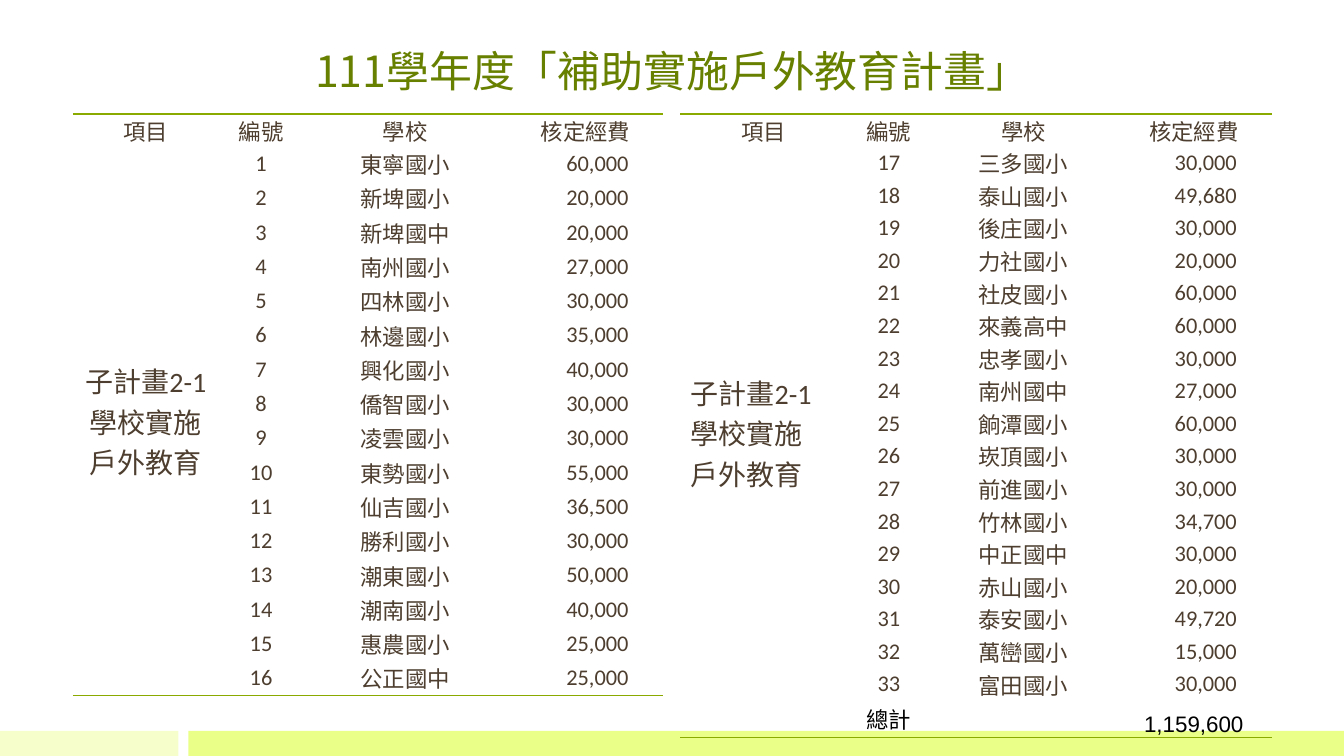
from dataclasses import dataclass
from lxml.etree import SubElement
from pptx import Presentation
from pptx.dml.color import RGBColor
from pptx.enum.shapes import MSO_SHAPE
from pptx.enum.text import MSO_ANCHOR, PP_ALIGN
from pptx.oxml import parse_xml
from pptx.oxml.ns import nsdecls, qn
from pptx.util import Pt


@dataclass(frozen=True)
class Theme:
    title: str = "688000"
    ink: str = "4D3E2F"
    black: str = "000000"
    rule: str = "8BAA00"
    pale: str = "F6FFCC"
    lime: str = "E9FF88"
    sans: str = "Calibri"
    han: str = "Noto Sans CJK SC"
    sum: str = "Arial"
    head: float = 30.6
    plan: float = 20
    body: float = 16


THEME = Theme()
PLAIN = "{2D5ABB26-0587-4C30-8999-92F81FD0307C}"
HEADS = ("項目", "編號", "學校", "核定經費")
PLAN = "子計畫2-1\n學校實施\n戶外教育"
FIRST = [
    ("東寧國小", 60000), ("新埤國小", 20000), ("新埤國中", 20000),
    ("南州國小", 27000), ("四林國小", 30000), ("林邊國小", 35000),
    ("興化國小", 40000), ("僑智國小", 30000), ("凌雲國小", 30000),
    ("東勢國小", 55000), ("仙吉國小", 36500), ("勝利國小", 30000),
    ("潮東國小", 50000), ("潮南國小", 40000), ("惠農國小", 25000),
    ("公正國中", 25000),
]
SECOND = [
    ("三多國小", 30000), ("泰山國小", 49680), ("後庄國小", 30000),
    ("力社國小", 20000), ("社皮國小", 60000), ("來義高中", 60000),
    ("忠孝國小", 30000), ("南州國中", 27000), ("餉潭國小", 60000),
    ("崁頂國小", 30000), ("前進國小", 30000), ("竹林國小", 34700),
    ("中正國中", 30000), ("赤山國小", 20000), ("泰安國小", 49720),
    ("萬巒國小", 15000), ("富田國小", 30000),
]


def put(frame, text, size=THEME.body, color=THEME.ink, font=THEME.sans,
        align=PP_ALIGN.CENTER):
    para = frame.paragraphs[0]
    para.alignment = align
    for i, line in enumerate(text.split("\n")):
        if i:
            para.add_line_break()
        run = para.add_run()
        run.text = line
        run.font.size = Pt(size)
        run.font.color.rgb = RGBColor.from_string(color)
        run.font.name = font
        SubElement(run.font._element, qn("a:ea"), typeface=THEME.han)


def inset(part, left=0, top=0, right=0):
    part.margin_left, part.margin_top = Pt(left), Pt(top)
    part.margin_right, part.margin_bottom = Pt(right), 0


def title(slide, left, top, width, height):
    frame = slide.shapes.add_textbox(
        Pt(left), Pt(top), Pt(width), Pt(height)).text_frame
    frame.word_wrap = True
    frame.vertical_anchor = MSO_ANCHOR.BOTTOM
    inset(frame)
    put(frame, "111學年度「補助實施戶外教育計畫」", size=THEME.head,
        color=THEME.title, font=THEME.han)


def footer(slide, left, top, width, height):
    short, gap = 127.5, 7
    rest = short + gap
    for x, span, color in ((left, short, THEME.pale),
                           (left + rest, width - rest, THEME.lime)):
        bar = slide.shapes.add_shape(
            MSO_SHAPE.RECTANGLE, Pt(x), Pt(top), Pt(span), Pt(height))
        bar.shadow.inherit = False
        bar.fill.solid()
        bar.fill.fore_color.rgb = RGBColor.from_string(color)
        bar.line.fill.background()


def rule(cell, side):
    cell._tc.get_or_add_tcPr().insert(0, parse_xml(
        f'<a:{side} {nsdecls("a")} w="12700"><a:solidFill>'
        f'<a:srgbClr val="{THEME.rule}"/></a:solidFill></a:{side}>'))


def grants(slide, left, top, widths, heights, start, schools, total=None,
           align=PP_ALIGN.CENTER, pad=0, drop=0):
    rows, cols = len(heights), len(widths)
    shape = slide.shapes.add_table(
        rows, cols, Pt(left), Pt(top), Pt(sum(widths)), Pt(sum(heights)))
    table = shape.table
    table.first_row = table.horz_banding = False
    table._tbl.tblPr.find(qn("a:tableStyleId")).text = PLAIN
    for col, width in zip(table.columns, widths):
        col.width = Pt(width)
    for row, height in zip(table.rows, heights):
        row.height = Pt(height)
    for cell in table.iter_cells():
        cell.fill.background()
        cell.vertical_anchor = MSO_ANCHOR.MIDDLE
        inset(cell)
    for c, head in enumerate(HEADS):
        put(table.cell(0, c).text_frame, head)
        rule(table.cell(0, c), "lnT")
        rule(table.cell(rows - 1, c), "lnB")
    plan = table.cell(1, 0)
    plan.merge(table.cell(len(schools), 0))
    inset(plan, left=pad, top=drop)
    put(plan.text_frame, PLAN, size=THEME.plan, align=align)
    if total is None:
        rule(plan, "lnB")
    for r, (school, amount) in enumerate(schools, 1):
        put(table.cell(r, 1).text_frame, str(start + r - 1))
        put(table.cell(r, 2).text_frame, school)
        cost = table.cell(r, 3)
        inset(cost, right=25)
        put(cost.text_frame, f"{amount:,}", align=PP_ALIGN.RIGHT)
    if total is not None:
        put(table.cell(rows - 1, 1).text_frame, "總計",
            color=THEME.black, font=THEME.han)
        cell = table.cell(rows - 1, 3)
        cell.vertical_anchor = MSO_ANCHOR.BOTTOM
        put(cell.text_frame, f"{total:,}", color=THEME.black, font=THEME.sum)


def main():
    deck = Presentation()
    deck.slide_width, deck.slide_height = Pt(960), Pt(540)
    slide = deck.slides.add_slide(deck.slide_layouts[6])
    footer(slide, 0, 522, 960, 18)
    title(slide, 111, 21.5, 738, 47)
    grants(slide, 52, 81.5, (104.5, 60, 146, 111.5),
           [23.3] + [24.5] * len(FIRST), 1, FIRST)
    grants(slide, 486, 81.5, (119, 60, 132, 111.5),
           [23.3] * (len(SECOND) + 1) + [26.5], len(FIRST) + 1, SECOND,
           total=1159600, align=PP_ALIGN.LEFT, pad=7.2, drop=13)
    deck.save("out.pptx")


if __name__ == "__main__":
    main()
